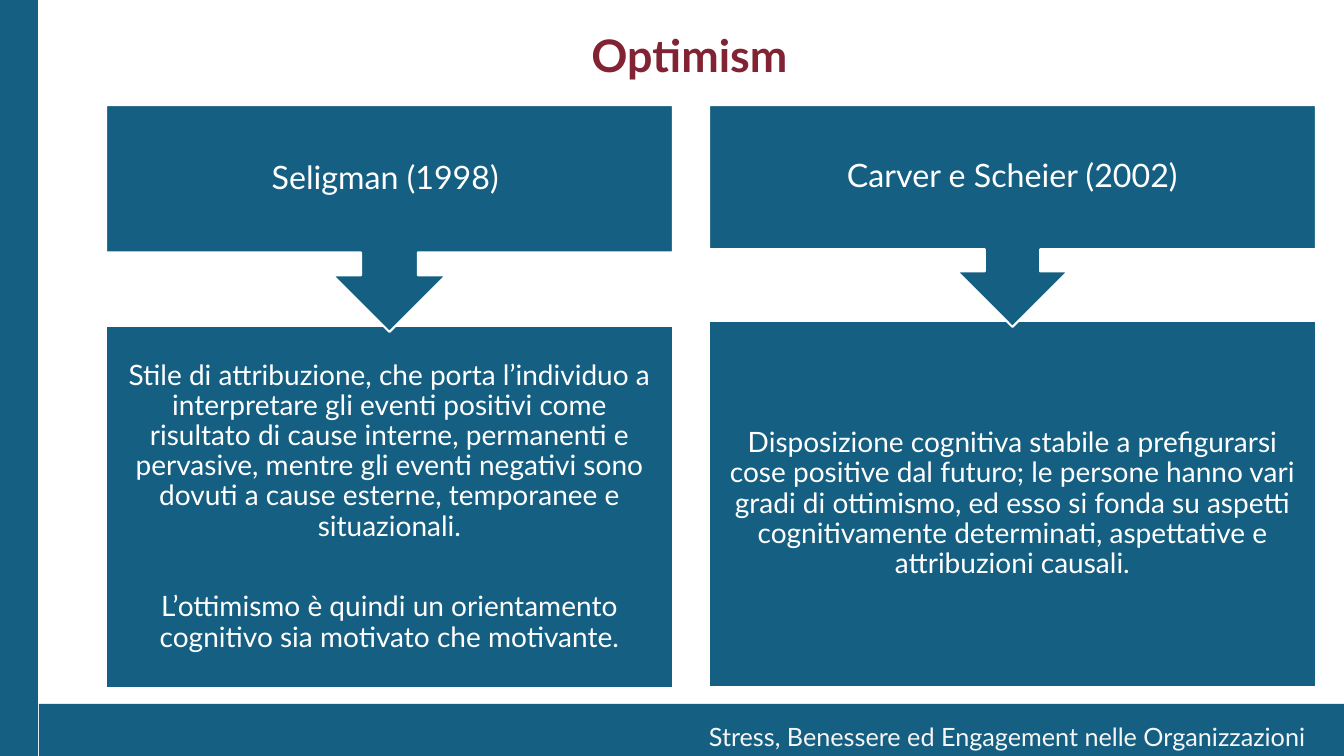
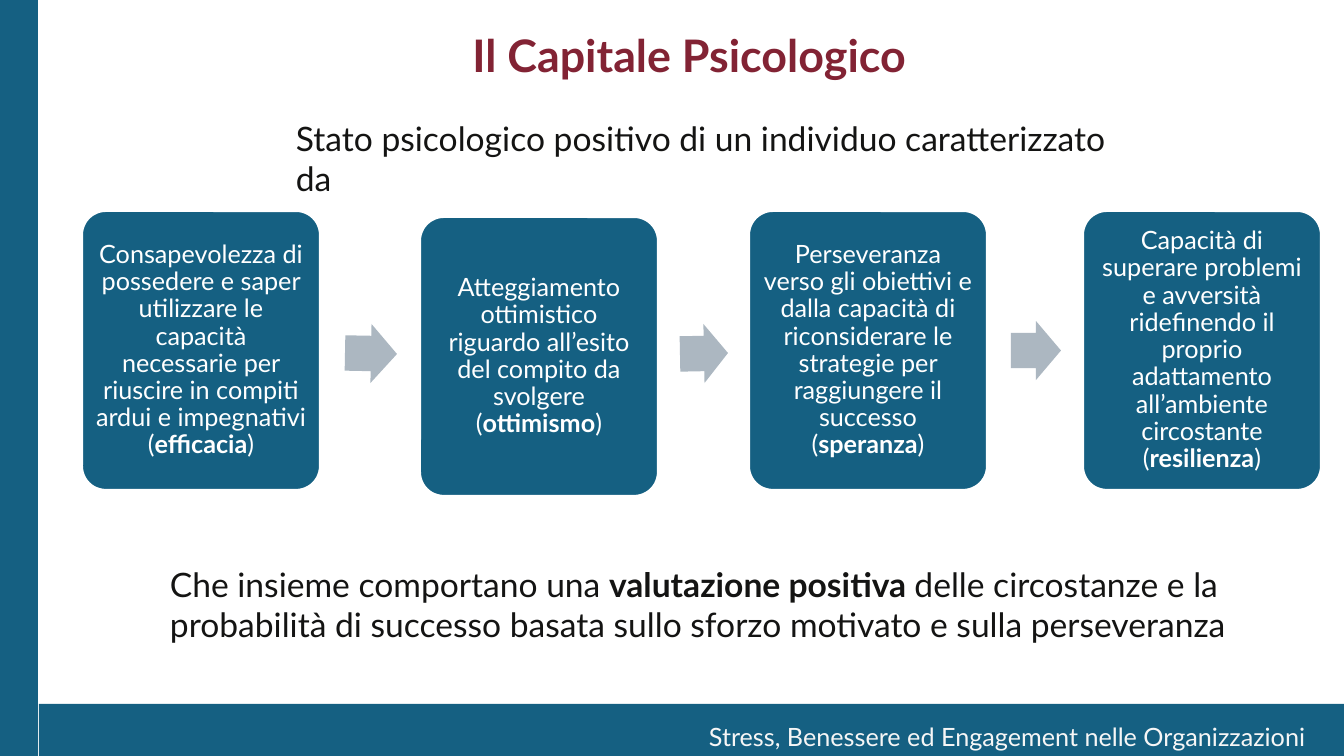
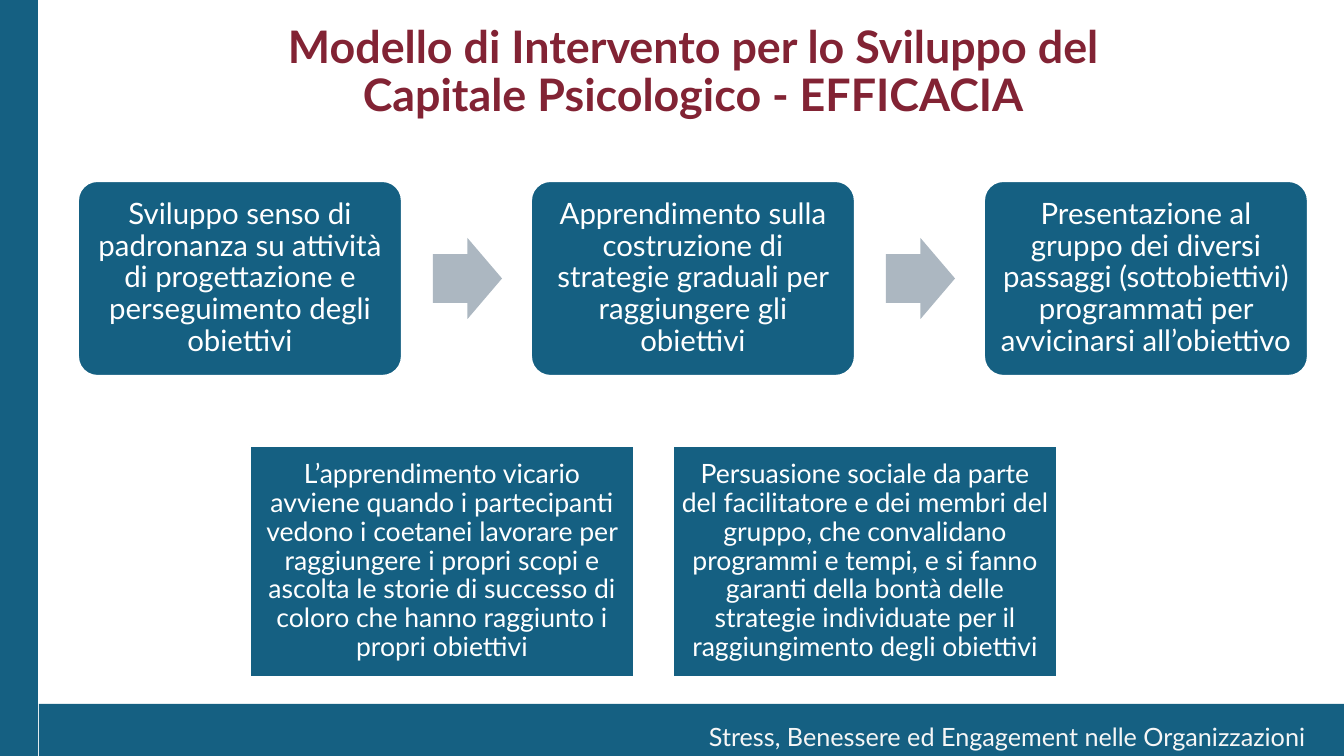
"""Builds three slides on optimism and psychological capital."""
from pptx import Presentation
from pptx.dml.color import RGBColor
from pptx.enum.shapes import MSO_SHAPE
from pptx.enum.text import MSO_ANCHOR, PP_ALIGN
from pptx.util import Emu, Pt

RECT, ROUND = MSO_SHAPE.RECTANGLE, MSO_SHAPE.ROUNDED_RECTANGLE
ARROW, CALLOUT = MSO_SHAPE.RIGHT_ARROW, MSO_SHAPE.DOWN_ARROW_CALLOUT
TOP, MIDDLE = MSO_ANCHOR.TOP, MSO_ANCHOR.MIDDLE
LEFT, CENTER = PP_ALIGN.LEFT, PP_ALIGN.CENTER

WIDTH, HEIGHT = 1344, 756
SCALE = 12192000 / WIDTH
TEAL, WINE, GREY = "156082", "822334", "ACB7C1"
WHITE, PALE, INK = "FFFFFF", "F6F6F6", "141413"
FOOTER = "Stress, Benessere ed Engagement nelle Organizzazioni"

TITLE = {"size": 32, "color": WINE, "bold": True, "align": CENTER, "anchor": MIDDLE, "spacing": 0.9}
BODY = {"size": 24, "color": INK}
BLOCK = {"color": WHITE, "align": CENTER, "anchor": MIDDLE, "spacing": 0.9}

AUTHORS = [
    {"x": 106, "width": 567, "callout": 227, "top": 326, "height": 362,
     "name": "Seligman (1998) ",
     "text": ["Stile di attribuzione, che porta l’individuo a interpretare gli eventi positivi "
              "come risultato di cause interne, permanenti e pervasive, mentre gli eventi "
              "negativi sono dovuti a cause esterne, temporanee e situazionali.",
              "L’ottimismo è quindi un orientamento cognitivo sia motivato che motivante."]},
    {"x": 709, "width": 607, "callout": 222, "top": 321, "height": 366,
     "name": "Carver e Scheier (2002)",
     "text": ["Disposizione cognitiva stabile a prefigurarsi cose positive dal futuro; le "
              "persone hanno vari gradi di ottimismo, ed esso si fonda su aspetti "
              "cognitivamente determinati, aspettative e attribuzioni causali."]},
]

INTRO = "Stato psicologico positivo di un individuo caratterizzato da"
TRAITS = [
    (82, 211, "Consapevolezza di possedere e saper utilizzare le capacità necessarie per "
              "riuscire in compiti ardui e impegnativi (*efficacia*)"),
    (420, 217, "Atteggiamento ottimistico riguardo all’esito del compito da svolgere (*ottimismo*)"),
    (749, 211, "Perseveranza verso gli obiettivi e dalla capacità di riconsiderare le strategie "
               "per raggiungere il successo (*speranza*)"),
    (1083, 211, "Capacità di superare problemi e avversità ridefinendo il proprio adattamento "
                "all’ambiente circostante (*resilienza*)"),
]
TRAIT_ARROWS = [(345, 324, 52, 1.1), (680, 324, 48, -1.1), (1011, 321, 50, 0)]
OUTCOME = ("Che insieme comportano una *valutazione positiva *delle circostanze e la probabilità "
           "di successo basata sullo sforzo motivato e sulla perseveranza")

STEPS = [
    "Sviluppo senso di padronanza su attività di progettazione e perseguimento degli obiettivi",
    "Apprendimento sulla costruzione di strategie graduali per raggiungere gli obiettivi",
    "Presentazione al gruppo dei diversi passaggi (sottobiettivi) programmati per "
    "avvicinarsi all’obiettivo",
]
SUPPORTS = [
    "L’apprendimento vicario avviene quando i partecipanti vedono i coetanei lavorare per "
    "raggiungere i propri scopi e ascolta le storie di successo di coloro che hanno raggiunto "
    "i propri obiettivi",
    "Persuasione sociale da parte del facilitatore e dei membri del gruppo, che convalidano "
    "programmi e tempi, e si fanno garanti della bontà delle strategie individuate per il "
    "raggiungimento degli obiettivi",
]


def px(n):
    """Turns px into EMU."""
    return Emu(round(n * SCALE))


def rgb(value):
    """Turns a hex string into a colour."""
    return RGBColor.from_string(value)


def write(sp, paragraphs, size, color, bold=False, align=LEFT, anchor=TOP,
          spacing=1.0, inset=None, gap=0):
    """Fills a shape with paragraphs; asterisks enclose bold text."""
    tf = sp.text_frame
    tf.word_wrap, tf.vertical_anchor = True, anchor
    if inset is not None:
        for side in ("left", "right", "top", "bottom"):
            setattr(tf, f"margin_{side}", px(inset))
    for i, text in enumerate(paragraphs):
        p = tf.add_paragraph() if i else tf.paragraphs[0]
        p.alignment, p.line_spacing = align, spacing
        if i:
            p.space_before = Pt(gap)
        for j, part in enumerate(text.split("*")):
            r = p.add_run()
            r.text = part
            fmt = {"name": "Lato", "size": Pt(size), "bold": bold or j % 2 == 1}
            for key, value in fmt.items():
                setattr(r.font, key, value)
            r.font.color.rgb = rgb(color)


def label(s, box, text, **style):
    """Adds a text box."""
    write(s.shapes.add_textbox(*map(px, box)), [text], **style)


def shape(s, kind, box, fill=TEAL, outlined=False, adjust=()):
    """Adds a flat preset shape."""
    sp = s.shapes.add_shape(kind, *map(px, box))
    sp.shadow.inherit = False
    sp.fill.solid()
    sp.fill.fore_color.rgb = rgb(fill)
    if outlined:
        sp.line.color.rgb = rgb(WHITE)
        sp.line.width = Pt(1.5)
    else:
        sp.line.fill.background()
    for i, value in enumerate(adjust):
        sp.adjustments[i] = value
    return sp


def block(s, kind, box, paragraphs, size, inset, gap=0):
    """Adds an outlined shape with centred text."""
    sp = shape(s, kind, box, outlined=True, adjust=(0.1,) if kind == ROUND else ())
    write(sp, paragraphs, size, inset=inset, gap=gap, **BLOCK)


def arrow(s, box, rotation=0):
    """Adds a grey arrow pointing right."""
    shape(s, ARROW, box, GREY, adjust=(0.6, 0.5)).rotation = rotation


def new_slide(prs, title, title_box=(219, 0, 941, 116)):
    """Adds a slide with bands, footer and title."""
    s = prs.slides.add_slide(prs.slide_layouts[6])
    shape(s, RECT, (0, 0, 38, HEIGHT))
    shape(s, RECT, (39, 704, WIDTH - 39, HEIGHT - 704))
    label(s, (699, 716, 645, 40), FOOTER, size=18, color=PALE)
    label(s, title_box, title, **TITLE)
    return s


def optimism(prs):
    """Two definitions of optimism."""
    s = new_slide(prs, "Optimism")
    for a in AUTHORS:
        block(s, RECT, (a["x"], a["top"], a["width"], a["height"]), a["text"], 20, 16, gap=36)
        block(s, CALLOUT, (a["x"], 105, a["width"], a["callout"]), [a["name"]], 23, 18)


def capital(prs):
    """Four traits of psychological capital."""
    s = new_slide(prs, "Il Capitale Psicologico")
    label(s, (286, 113, 873, 50), INTRO, **BODY)
    for x, y, text in TRAITS:
        block(s, ROUND, (x, y, 238, 279), [text], 18, 7)
    for x, y, width, rotation in TRAIT_ARROWS:
        arrow(s, (x, y, width, 59), rotation)
    label(s, (160, 559, 1126, 92), OUTCOME, **BODY)


def intervention(prs):
    """Steps and supports that develop efficacy."""
    s = new_slide(prs, "Modello di Intervento per lo Sviluppo del Capitale Psicologico - EFFICACIA",
                  (223, 0, 941, 146))
    for i, text in enumerate(SUPPORTS):
        block(s, RECT, (250 + 423 * i, 446, 384, 231), [text], 19, 7)
    for i, text in enumerate(STEPS):
        x = 78 + 453 * i
        block(s, ROUND, (x, 181, 324, 195), [text], 21, 9)
        if i < len(STEPS) - 1:
            arrow(s, (x + 355, 238, 69, 81))


def main():
    """Builds and saves the presentation."""
    prs = Presentation()
    prs.slide_width, prs.slide_height = px(WIDTH), px(HEIGHT)
    for build in (optimism, capital, intervention):
        build(prs)
    prs.save("out.pptx")


if __name__ == "__main__":
    main()
